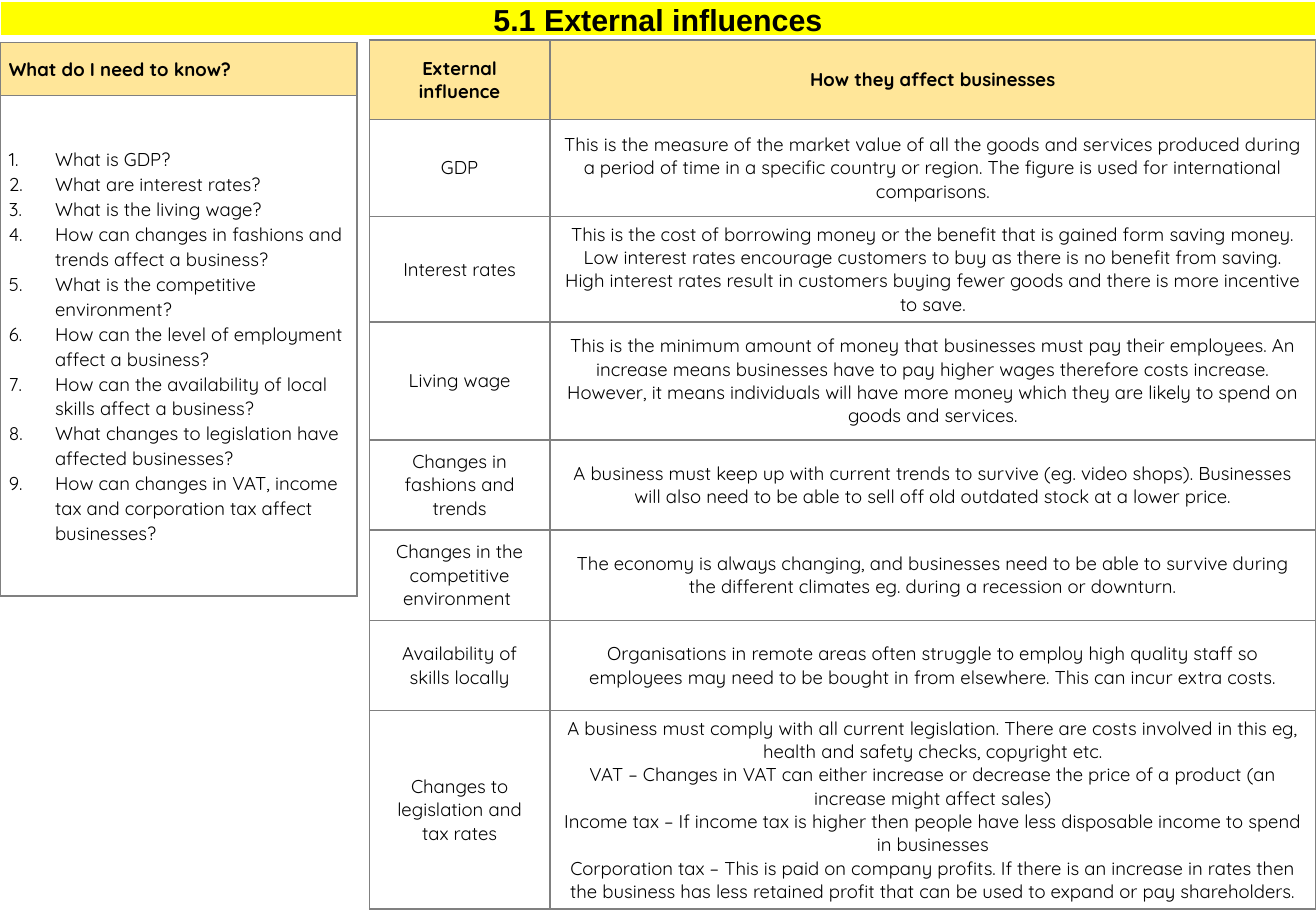
"""Build a one-page revision sheet on external influences on business."""
import pptx
import pptx.dml.color
import pptx.enum.text
import pptx.oxml
import pptx.oxml.ns
import pptx.util

Pt = pptx.util.Pt
ALIGN = pptx.enum.text.PP_ALIGN
MIDDLE = pptx.enum.text.MSO_ANCHOR.MIDDLE
TOP = pptx.enum.text.MSO_ANCHOR.TOP
COLOURS = {"banner": "FFFF00", "heading": "FFE699", "border": "808080",
           "banner edge": "FFFFFF", "text": "000000"}

TITLE_FONT = {"name": "Arial", "size": Pt(18), "bold": True}
HEADING_FONT = {"name": "Quicksand", "size": Pt(11), "bold": True}
BODY_FONT = {"name": "Quicksand", "size": Pt(11), "bold": False}
NARROW_MARGINS = {"margin_left": Pt(5.3), "margin_right": Pt(5.3),
                  "margin_top": 0, "margin_bottom": 0}

BANNER_STYLE = {
    "heading_fill": "banner", "heading_font": TITLE_FONT,
    "border": "banner edge", "border_widths": {"L": 1, "R": 1, "T": 1, "B": 3},
    "cell": {**NARROW_MARGINS, "vertical_anchor": TOP},
    "lines": {"alignment": ALIGN.CENTER, "line_spacing": 1.07},
}
INFLUENCE_STYLE = {
    "heading_fill": "heading", "heading_font": HEADING_FONT,
    "border": "border", "border_widths": {"L": 1, "R": 1, "T": 1, "B": 1},
    "cell": {"vertical_anchor": MIDDLE},
    "lines": {"alignment": ALIGN.CENTER},
}
QUESTION_STYLE = {
    **INFLUENCE_STYLE,
    "cell": {**NARROW_MARGINS, "vertical_anchor": MIDDLE},
    "lines": {"alignment": ALIGN.LEFT, "line_spacing": 1.07},
}

BANNER_ROWS = [[["5.1 External influences"]]]
QUESTIONS = [
    "What is GDP?",
    "What are interest rates?",
    "What is the living wage?",
    "How can changes in fashions and trends affect a business?",
    "What is the competitive environment?",
    "How can the level of employment affect a business?",
    "How can the availability of local skills affect a business?",
    "What changes to legislation have affected businesses?",
    "How can changes in VAT, income tax and corporation tax affect businesses?",
]
QUESTION_ROWS = [[["What do I need to know?"]], [QUESTIONS]]

INFLUENCE_ROWS = [
    [["External influence"], ["How they affect businesses"]],
    [["GDP"], [
        "This is the measure of the market value of all the goods and services produced "
        "during a period of time in a specific country or region. The figure is used for "
        "international comparisons."]],
    [["Interest rates"], [
        "This is the cost of borrowing money or the benefit that is gained form saving money. "
        "Low interest rates encourage customers to buy as there is no benefit from saving. "
        "High interest rates result in customers buying fewer goods and there is more "
        "incentive to save."]],
    [["Living wage"], [
        "This is the minimum amount of money that businesses must pay their employees. An "
        "increase means businesses have to pay higher wages therefore costs increase. However, "
        "it means individuals will have more money which they are likely to spend on goods "
        "and services."]],
    [["Changes in fashions and trends"], [
        "A business must keep up with current trends to survive (eg. video shops). Businesses "
        "will also need to be able to sell off old outdated stock at a lower price."]],
    [["Changes in the competitive environment "], [
        "The economy is always changing, and businesses need to be able to survive during the "
        "different climates eg. during a recession or downturn."]],
    [["Availability of skills locally"], [
        "Organisations in remote areas often struggle to employ high quality staff so employees "
        "may need to be bought in from elsewhere. This can incur extra costs."]],
    [["Changes to legislation and tax rates"], [
        "A business must comply with all current legislation. There are costs involved in this "
        "eg, health and safety checks, copyright etc.",
        "VAT – Changes in VAT can either increase or decrease the price of a product (an "
        "increase might affect sales)",
        "Income tax – If income tax is higher then people have less disposable income to spend "
        "in businesses",
        "Corporation tax – This is paid on company profits. If there is an increase in rates "
        "then the business has less retained profit that can be used to expand or pay "
        "shareholders."]],
]


def apply_format(target, values):
    """Set each named format value on the target."""
    for name, value in values.items():
        setattr(target, name, value)


def add_number(paragraph):
    """Give a paragraph automatic numbering with a hanging indent."""
    properties = paragraph._p.get_or_add_pPr()
    properties.set("marL", str(Pt(27.36)))
    properties.set("indent", str(-Pt(27.36)))
    properties.append(pptx.oxml.parse_xml(
        f'<a:buAutoNum {pptx.oxml.ns.nsdecls("a")} type="arabicPeriod"/>'))


def write_lines(frame, lines, font, line_format):
    """Write each line as a formatted paragraph, numbering the question list."""
    for index, line in enumerate(lines):
        paragraph = frame.add_paragraph() if index else frame.paragraphs[0]
        if lines is QUESTIONS:
            add_number(paragraph)
        apply_format(paragraph, line_format)
        run = paragraph.add_run()
        run.text = line
        apply_format(run.font, font)
        run.font.color.rgb = pptx.dml.color.RGBColor.from_string(COLOURS["text"])


def add_borders(cell, colour, widths):
    """Draw a line of the given width on each side of a cell."""
    properties = cell._tc.get_or_add_tcPr()
    for side, width in widths.items():
        properties.append(pptx.oxml.parse_xml(
            f'<a:ln{side} {pptx.oxml.ns.nsdecls("a")} w="{Pt(width)}"><a:solidFill>'
            f'<a:srgbClr val="{COLOURS[colour]}"/></a:solidFill></a:ln{side}>'))


def fill_cell(cell, lines, style, is_heading):
    """Format one cell as a heading or body cell and write its lines."""
    add_borders(cell, style["border"], style["border_widths"])
    apply_format(cell, style["cell"])
    if is_heading:
        cell.fill.solid()
        cell.fill.fore_color.rgb = pptx.dml.color.RGBColor.from_string(
            COLOURS[style["heading_fill"]])
    else:
        cell.fill.background()
    font = style["heading_font"] if is_heading else BODY_FONT
    write_lines(cell.text_frame, lines, font, style["lines"])


def add_grid(slide, left, top, widths, heights, rows, style):
    """Add a bordered table whose first row is a shaded heading."""
    grid = slide.shapes.add_table(
        len(heights), len(widths), Pt(left), Pt(top), Pt(sum(widths)), Pt(sum(heights))).table
    apply_format(grid, {"first_row": False, "horz_banding": False})
    for column, width in zip(grid.columns, widths):
        column.width = Pt(width)
    for index, (row, height, contents) in enumerate(zip(grid.rows, heights, rows)):
        row.height = Pt(height)
        for cell, lines in zip(row.cells, contents):
            fill_cell(cell, lines, style, index == 0)


def main():
    """Assemble and save the revision sheet."""
    deck = pptx.Presentation()
    apply_format(deck, {"slide_width": Pt(780), "slide_height": Pt(540)})
    slide = deck.slides.add_slide(deck.slide_layouts[6])
    add_grid(slide, 0, 0.7, [780], [18], BANNER_ROWS, BANNER_STYLE)
    add_grid(slide, 0, 25.2, [211.7], [31.5, 296.7], QUESTION_ROWS, QUESTION_STYLE)
    add_grid(slide, 219, 23.8, [106.9, 454.1],
             [46.9, 57.6, 53.5, 70, 53.5, 53.5, 53.5, 53.5],
             INFLUENCE_ROWS, INFLUENCE_STYLE)
    deck.save("out.pptx")


if __name__ == "__main__":
    main()
